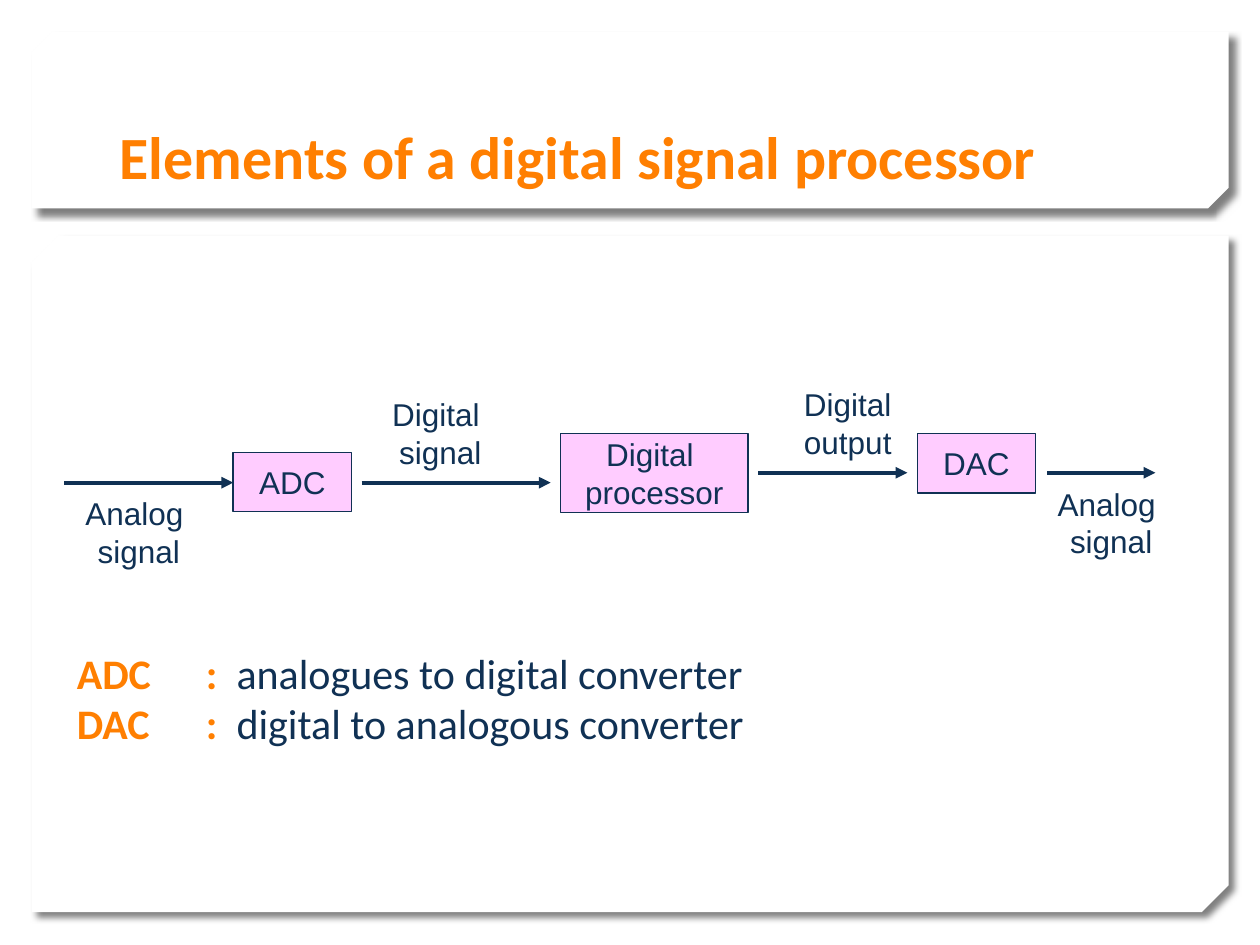
"""Build the slide on the elements of a digital signal processor."""
from dataclasses import dataclass
from typing import Any

from lxml import etree
from pptx import Presentation
from pptx import util as u
from pptx.dml import color
from pptx.enum import shapes, text
from pptx.oxml import ns


@dataclass(frozen=True)
class Theme:
    ink: str = "103154"
    accent: str = "FF7F01"
    pink: str = "FFCCFF"
    paper: str = "FFFFFF"
    shade: str = "000000"
    head: str = "Calibri"
    body: str = "Arial"
    title: float = 34.2
    list: float = 24
    label: float = 18
    edge: float = 0.75
    flow: float = 2.25


@dataclass(frozen=True)
class Panel:
    top: float
    high: float
    snip: float


@dataclass(frozen=True)
class Block:
    words: str
    left: float
    top: float
    wide: float
    high: float = 1.2
    solid: bool = False


@dataclass(frozen=True)
class Arrow:
    start: float
    end: float
    level: float


@dataclass(frozen=True)
class Term:
    key: str
    sense: str


LOOK = Theme()
PANELS = [Panel(4.75, 13.64, 0.04), Panel(0.64, 3.56, 0.117)]
BLOCKS = [
    Block("Analog \nsignal", 1.3, 10.13, 3),
    Block("Digital\n signal", 7.29, 8.13, 3),
    Block("Digital\noutput", 15.29, 7.92, 3.6),
    Block("Analog \nsignal", 20.9, 9.93, 3),
    Block("ADC", 4.7, 9.12, 2.39, solid=True),
    Block("Digital \nprocessor", 11.3, 8.74, 3.78, 1.6, solid=True),
    Block("DAC", 18.49, 8.74, 2.39, solid=True),
]
ARROWS = [
    Arrow(1.3, 4.7, 9.73),
    Arrow(7.29, 11.1, 9.73),
    Arrow(15.29, 18.29, 9.53),
    Arrow(21.11, 23.29, 9.53),
]
TERMS = [
    Term("ADC", "analogues to digital converter"),
    Term("DAC", "digital to analogous converter"),
]
STOPS = (2.6, 3.22)


def assign(item: Any, **values: Any) -> None:
    """Set each given value on the item."""
    for name, value in values.items():
        setattr(item, name, value)


def tint(code: str) -> color.RGBColor:
    """Turn a hex code into a colour."""
    return color.RGBColor.from_string(code)


def style(font: Any, face: str, size: float, code: str, bold: bool = False) -> None:
    """Give a font its face, size, colour and weight."""
    assign(font, name=face, size=u.Pt(size), bold=bold)
    font.color.rgb = tint(code)


def add(parent: Any, tag: str, **values: Any) -> Any:
    """Append a drawing element with the given attributes."""
    node = etree.SubElement(parent, ns.qn(tag))
    for name, value in values.items():
        node.set(name, str(value))
    return node


def draw_panel(slide: Any, panel: Panel) -> None:
    """Draw a white panel with two snipped corners and a shadow."""
    shape = slide.shapes.add_shape(
        shapes.MSO_SHAPE.SNIP_2_DIAG_RECTANGLE,
        u.Cm(0.64), u.Cm(panel.top), u.Cm(24.13), u.Cm(panel.high))
    shape.adjustments[0], shape.adjustments[1] = panel.snip, 0
    shape.fill.solid()
    shape.fill.fore_color.rgb = tint(LOOK.paper)
    shape.line.fill.background()
    effect = add(shape._element.spPr, "a:effectLst")
    shadow = add(effect, "a:outerShdw", blurRad=u.Pt(4), dist=u.Pt(5),
                 dir=45 * 60000, algn="tl", rotWithShape=0)
    add(add(shadow, "a:srgbClr", val=LOOK.shade), "a:alpha", val=50000)


def draw_block(slide: Any, block: Block) -> None:
    """Draw a stage of the chain or a signal label."""
    shape = slide.shapes.add_shape(
        shapes.MSO_SHAPE.RECTANGLE,
        u.Cm(block.left), u.Cm(block.top), u.Cm(block.wide), u.Cm(block.high))
    shape.shadow.inherit = False
    shape.fill.solid()
    shape.fill.fore_color.rgb = tint(LOOK.pink if block.solid else LOOK.paper)
    if block.solid:
        shape.line.color.rgb = tint(LOOK.ink)
        shape.line.width = u.Pt(LOOK.edge)
    else:
        shape.line.fill.background()
    frame = shape.text_frame
    assign(frame, text=block.words, word_wrap=False,
           vertical_anchor=text.MSO_ANCHOR.MIDDLE)
    for para in frame.paragraphs:
        para.alignment = text.PP_ALIGN.CENTER
        style(para.font, LOOK.body, LOOK.label, LOOK.ink)


def draw_arrow(slide: Any, arrow: Arrow) -> None:
    """Draw a level arrow of the signal flow."""
    line = slide.shapes.add_connector(
        shapes.MSO_CONNECTOR.STRAIGHT,
        u.Cm(arrow.start), u.Cm(arrow.level), u.Cm(arrow.end), u.Cm(arrow.level))
    line.line.color.rgb = tint(LOOK.ink)
    line.line.width = u.Pt(LOOK.flow)
    add(line.line._get_or_add_ln(), "a:tailEnd", type="triangle")
    add(line._element.spPr, "a:effectLst")


def draw_terms(slide: Any) -> None:
    """Write the list of terms with its tab stops."""
    box = slide.shapes.add_textbox(u.Cm(1.3), u.Cm(12.93), u.Cm(14.5), u.Cm(2.31))
    frame = box.text_frame
    assign(frame, word_wrap=False, auto_size=text.MSO_AUTO_SIZE.SHAPE_TO_FIT_TEXT)
    for rank, term in enumerate(TERMS):
        para = frame.add_paragraph() if rank else frame.paragraphs[0]
        tabs = add(para._p.get_or_add_pPr(), "a:tabLst")
        for stop in STOPS:
            add(tabs, "a:tab", pos=u.Cm(stop), algn="l")
        for words, code, bold in ((f"{term.key}\t:", LOOK.accent, True),
                                  (f"\t{term.sense}", LOOK.ink, False)):
            run = para.add_run()
            run.text = words
            style(run.font, LOOK.head, LOOK.list, code, bold)


def draw_title(slide: Any) -> None:
    """Place and write the title in front of its panel."""
    title = slide.shapes.title
    assign(title, left=u.Cm(2.16), top=u.Cm(0.81), width=u.Cm(21.06), height=u.Cm(3.18))
    frame = title.text_frame
    assign(frame, text="Elements of a digital signal processor", word_wrap=True,
           auto_size=text.MSO_AUTO_SIZE.NONE, vertical_anchor=text.MSO_ANCHOR.BOTTOM)
    para = frame.paragraphs[0]
    para.alignment = text.PP_ALIGN.LEFT
    style(para.runs[0].font, LOOK.head, LOOK.title, LOOK.accent, True)
    slide.shapes._spTree.append(title._element)


def main() -> None:
    """Build and save the slide."""
    deck = Presentation()
    assign(deck, slide_width=u.Cm(25.4), slide_height=u.Cm(19.05))
    slide = deck.slides.add_slide(deck.slide_layouts[5])
    for draw, items in ((draw_panel, PANELS), (draw_block, BLOCKS), (draw_arrow, ARROWS)):
        for item in items:
            draw(slide, item)
    draw_terms(slide)
    draw_title(slide)
    deck.save("out.pptx")


if __name__ == "__main__":
    main()
